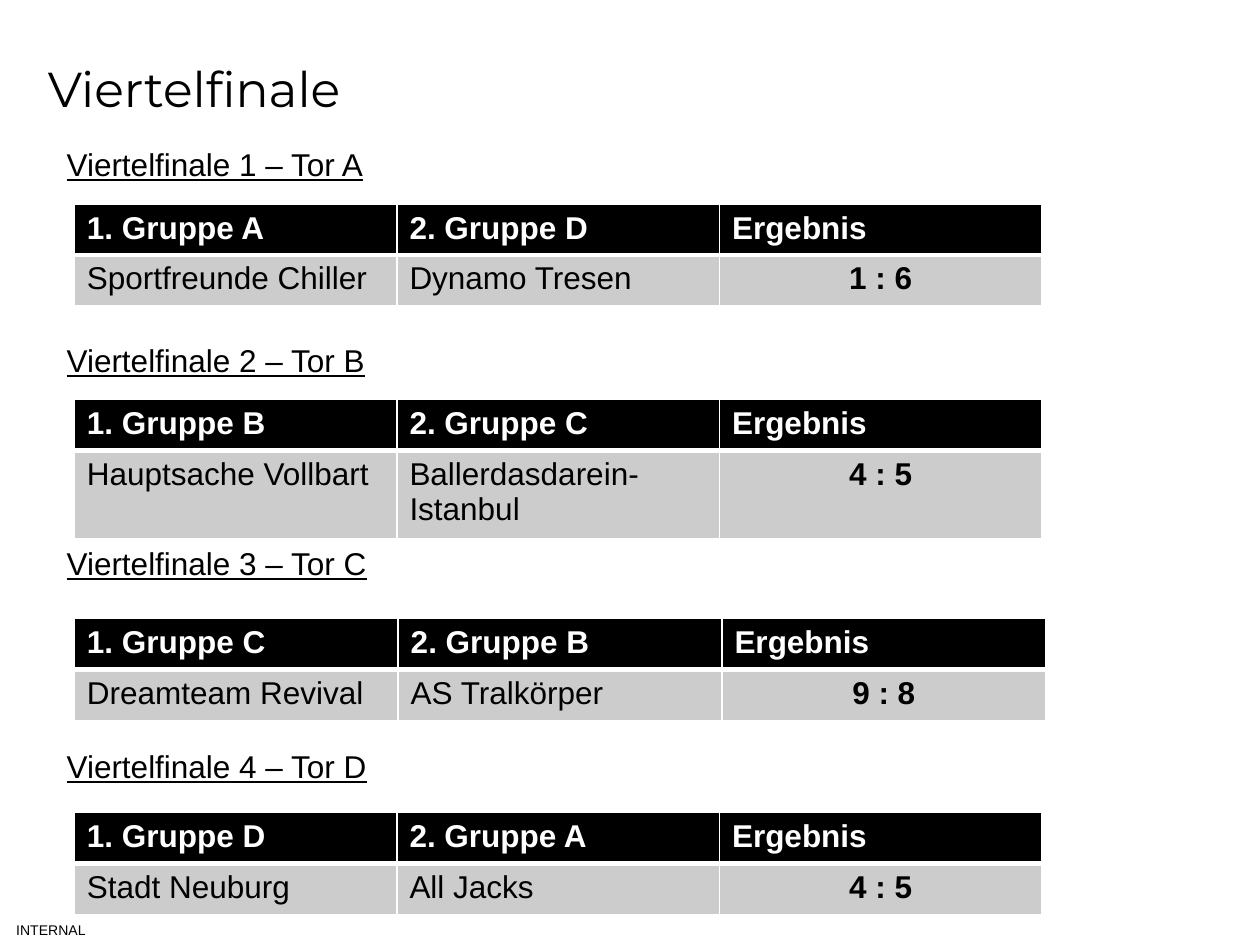
from lxml.etree import SubElement
from pptx import Presentation
from pptx.dml.color import RGBColor
from pptx.enum.text import MSO_ANCHOR, PP_ALIGN
from pptx.oxml import parse_xml
from pptx.oxml.ns import nsdecls
from pptx.util import Inches, Pt

BLACK = RGBColor(0x00, 0x00, 0x00)
WHITE = RGBColor(0xFF, 0xFF, 0xFF)
GREY = RGBColor(0xCC, 0xCC, 0xCC)

ROW_HEIGHT = 0.405
# goal, label top, table top, column width, groups, teams, result
MATCHES = [
    ("A", 1.1, 1.62, 2.56, "AD", ("Sportfreunde Chiller", "Dynamo Tresen"), "1 : 6"),
    ("B", 2.66, 3.17, 2.56, "BC", ("Hauptsache Vollbart", "Ballerdasdarein-Istanbul"), "4 : 5"),
    ("C", 4.27, 4.91, 2.57, "CB", ("Dreamteam Revival", "AS Tralkörper"), "9 : 8"),
    ("D", 5.88, 6.45, 2.56, "DA", ("Stadt Neuburg", "All Jacks"), "4 : 5"),
]


def format_font(p, size, color=BLACK, name="Arial", bold=False, underline=False):
    for r in p.runs:
        f = r.font
        f.size, f.name, f.bold = Pt(size), name, bold
        f.underline = underline
        f.color.rgb = color


def add_title(s, text):
    title = s.shapes.title
    title.left, title.top = Inches(0.28), Inches(0.01)
    title.width, title.height = Inches(7.87), Inches(1.37)
    tf = title.text_frame
    tf.text = text
    tf.vertical_anchor = MSO_ANCHOR.MIDDLE
    p = tf.paragraphs[0]
    p.alignment = PP_ALIGN.LEFT
    format_font(p, 28, name="Montserrat")


def add_label(s, text, left, top, width, height):
    tf = s.shapes.add_textbox(Inches(left), Inches(top), Inches(width), Inches(height)).text_frame
    tf.word_wrap = True
    tf.text = text
    return tf


def add_classification(s):
    tf = add_label(s, "INTERNAL", 0, 7.26, 0.81, 0.24)
    tf.margin_left = tf.margin_right = tf.margin_top = tf.margin_bottom = 0
    tf.vertical_anchor = MSO_ANCHOR.MIDDLE
    p = tf.paragraphs[0]
    p.alignment = PP_ALIGN.CENTER
    format_font(p, 8)


def set_borders(cell, top, bottom):
    """Draw white borders; they must precede the fill in the cell properties."""
    tc_pr = cell._tc.get_or_add_tcPr()
    widths = {"lnL": 1, "lnR": 1, "lnT": top, "lnB": bottom}
    for i, (tag, width) in enumerate(widths.items()):
        line = parse_xml(f'<a:{tag} {nsdecls("a")} w="{Pt(width)}"/>')
        fill = SubElement(line, f"{{{line.nsmap['a']}}}solidFill")
        SubElement(fill, f"{{{line.nsmap['a']}}}srgbClr", val=str(WHITE))
        tc_pr.insert(i, line)


def fill_cell(cell, text, is_header, is_result):
    cell.text = text
    cell.fill.solid()
    cell.fill.fore_color.rgb = BLACK if is_header else GREY
    p = cell.text_frame.paragraphs[0]
    if is_result and not is_header:
        p.alignment = PP_ALIGN.CENTER
    format_font(p, 18, WHITE if is_header else BLACK, bold=is_header or is_result)
    set_borders(cell, top=1 if is_header else 3, bottom=3 if is_header else 1)


def add_match_table(s, top, col_width, groups, teams, result):
    rows = [
        (f"1. Gruppe {groups[0]}", f"2. Gruppe {groups[1]}", "Ergebnis"),
        (*teams, result),
    ]
    table = s.shapes.add_table(2, 3, Inches(0.59), Inches(top),
                               Inches(3 * col_width), Inches(2 * ROW_HEIGHT)).table
    for col in table.columns:
        col.width = Inches(col_width)
    for i, texts in enumerate(rows):
        table.rows[i].height = Inches(ROW_HEIGHT)
        for j, text in enumerate(texts):
            fill_cell(table.cell(i, j), text, is_header=i == 0, is_result=j == 2)


def main():
    prs = Presentation()
    prs.slide_width, prs.slide_height = Inches(10), Inches(7.5)
    s = prs.slides.add_slide(prs.slide_layouts[5])
    add_classification(s)
    add_title(s, "Viertelfinale")
    for n, (goal, label_top, table_top, *match) in enumerate(MATCHES, 1):
        tf = add_label(s, f"Viertelfinale {n} – Tor {goal}", 0.43, label_top, 8.19, 0.4)
        format_font(tf.paragraphs[0], 18, underline=True)
        add_match_table(s, table_top, *match)
    prs.save("out.pptx")


if __name__ == "__main__":
    main()
